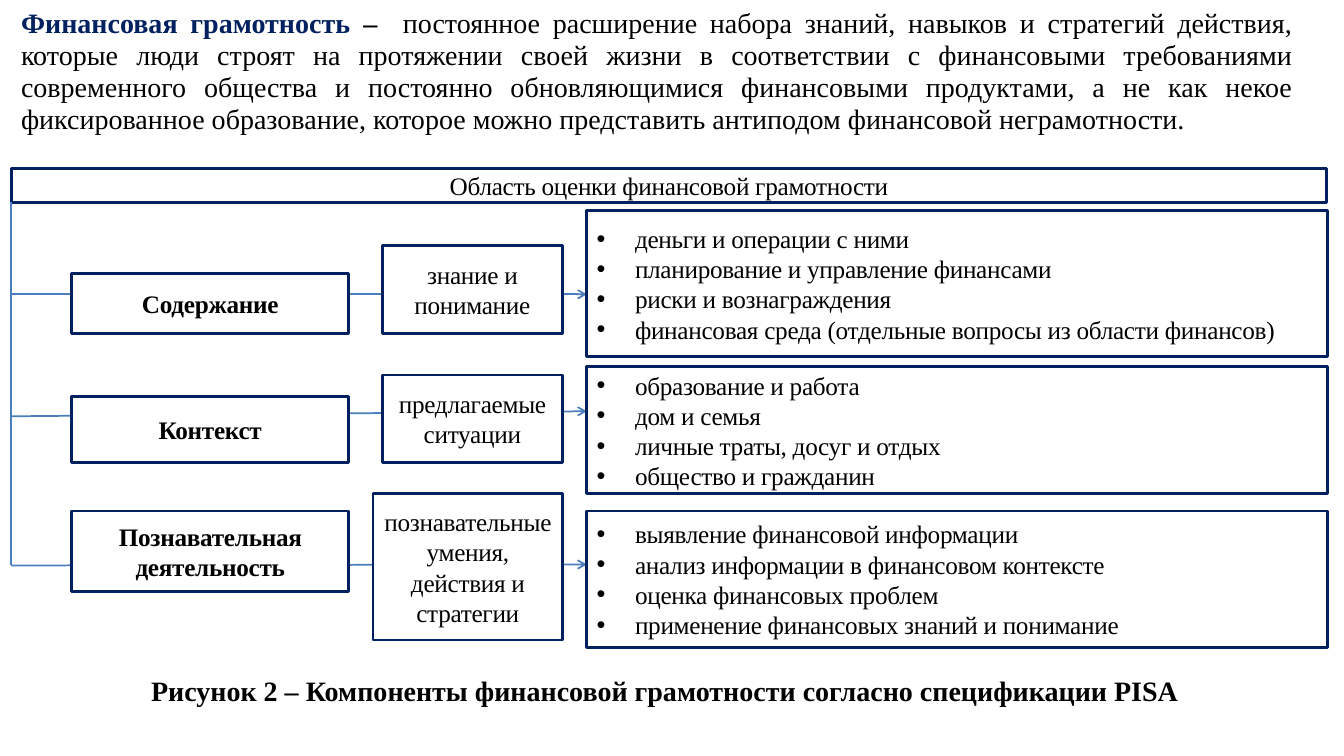
"""Build the slide on the components of financial literacy."""
from lxml import etree
from pptx import Presentation
from pptx.dml.color import RGBColor
from pptx.enum.shapes import MSO_CONNECTOR, MSO_SHAPE
from pptx.enum.text import MSO_ANCHOR, PP_ALIGN
from pptx.oxml.ns import qn
from pptx.util import Inches, Pt

RECT = MSO_SHAPE.RECTANGLE
STRAIGHT = MSO_CONNECTOR.STRAIGHT
MIDDLE = MSO_ANCHOR.MIDDLE
CENTER, JUSTIFY = PP_ALIGN.CENTER, PP_ALIGN.JUSTIFY

WIDTH, HEIGHT = Inches(13.33), Inches(7.5)
FONT = "Times New Roman"
COLORS = {"navy": "002060", "black": "000000", "white": "FFFFFF", "link": "4B7EBC"}

TRUNK_X = 0.83
LABEL = (5.33, 20.63)
MEANS = (28.43, 13.43)
WIDE_MEANS = (27.76, 14.1)
ITEMS = (43.66, 55.14)

TITLE = "Область оценки финансовой грамотности"
CAPTION = "Рисунок 2 – Компоненты финансовой грамотности согласно спецификации PISA"
DEFINITION = (
    "постоянное расширение набора знаний, навыков и стратегий действия, "
    "которые люди строят на протяжении своей жизни в соответствии с финансовыми "
    "требованиями современного общества и постоянно обновляющимися финансовыми "
    "продуктами, а не как некое фиксированное образование, которое можно "
    "представить антиподом финансовой неграмотности."
)
COMPONENTS = [
    {
        "label": ("Содержание", LABEL, (36.13, 8)),
        "means": ("знание и понимание", MEANS, (32.53, 11.6)),
        "items": (["деньги и операции с ними",
                   "планирование и управление финансами",
                   "риски и вознаграждения",
                   "финансовая среда (отдельные вопросы из области финансов)"],
                  ITEMS, (27.87, 19.33)),
        "arrow": (38.93, 38.93),
    },
    {
        "label": ("Контекст", LABEL, (52.4, 8.8)),
        "means": ("предлагаемые ситуации", MEANS, (49.6, 11.6)),
        "items": (["образование и работа",
                   "дом и семья",
                   "личные траты, досуг и отдых",
                   "общество и гражданин"],
                  ITEMS, (48.53, 16.8)),
        "arrow": (55.07, 54.4),
    },
    {
        "label": ("Познавательная деятельность", LABEL, (67.6, 10.67)),
        "means": ("познавательные умения, действия и стратегии",
                  WIDE_MEANS, (65.33, 19.33)),
        "items": (["выявление финансовой информации",
                   "анализ информации в финансовом контексте",
                   "оценка финансовых проблем",
                   "применение финансовых знаний и понимание"],
                  ITEMS, (67.6, 18)),
        "arrow": (74.8, 74.67),
    },
]


def across(share):
    """Turn a percentage of the slide's width into a length."""
    return round(WIDTH * share / 100)


def down(share):
    """Turn a percentage of the slide's height into a length."""
    return round(HEIGHT * share / 100)


def place(col, row):
    """Turn a column and a row into left, top, width and height."""
    return across(col[0]), down(row[0]), across(col[1]), down(row[1])


def add_run(p, text, size, bold=False, color="black"):
    """Add one formatted run to a paragraph."""
    r = p.add_run()
    r.text = text
    r.font.name, r.font.size, r.font.bold = FONT, Pt(size), bold
    r.font.color.rgb = RGBColor.from_string(COLORS[color])
    return r


def add_bullet(p):
    """Give a paragraph a hanging round bullet."""
    pPr = p._p.get_or_add_pPr()
    pPr.set("marL", str(Inches(0.38)))
    pPr.set("indent", str(-Inches(0.38)))
    etree.SubElement(pPr, qn("a:buFont")).set("typeface", "Arial")
    etree.SubElement(pPr, qn("a:buChar")).set("char", "•")


def add_box(s, lines, col, row, bold=False, bullets=False):
    """Add a navy-framed rectangle holding centred text or a bullet list."""
    sp = s.shapes.add_shape(RECT, *place(col, row))
    sp.shadow.inherit = False
    sp.fill.solid()
    sp.fill.fore_color.rgb = RGBColor.from_string(COLORS["white"])
    sp.line.color.rgb = RGBColor.from_string(COLORS["navy"])
    sp.line.width = Pt(2)
    tf = sp.text_frame
    tf.word_wrap, tf.vertical_anchor = True, MIDDLE
    for i, line in enumerate(lines):
        p = tf.add_paragraph() if i else tf.paragraphs[0]
        p.alignment = JUSTIFY if bullets else CENTER
        if bullets:
            add_bullet(p)
        r = add_run(p, line, 18, bold)
        r.font._element.set("spc", "-20")


def add_line(s, start, end, arrow=False):
    """Add a thin straight line, with an open arrowhead if asked."""
    line = s.shapes.add_connector(
        STRAIGHT, across(start[0]), down(start[1]), across(end[0]), down(end[1]))
    line.line.color.rgb = RGBColor.from_string(COLORS["link"])
    line.line.width = Pt(1.25)
    if arrow:
        ln = line.line._get_or_add_ln()
        etree.SubElement(ln, qn("a:tailEnd")).set("type", "arrow")
    etree.SubElement(line._element.spPr, qn("a:effectLst"))


def add_text(s, col, row, alignment):
    """Add a wrapping text box and return its first paragraph."""
    tf = s.shapes.add_textbox(*place(col, row)).text_frame
    tf.word_wrap = True
    p = tf.paragraphs[0]
    p.alignment = alignment
    return p


def add_definition(s):
    """Add the definition at the top of the slide."""
    p = add_text(s, (TRUNK_X, 96.1), (0.4, 18.4), JUSTIFY)
    p.line_spacing = 0.95
    add_run(p, "Финансовая грамотность ", 20, True, "navy")
    add_run(p, "–  ", 20, True)
    add_run(p, DEFINITION, 20)


def add_caption(s):
    """Add the figure caption at the bottom of the slide."""
    p = add_text(s, (0.6, 97.75), (88.4, 5.87), CENTER)
    p.space_before, p.space_after = Pt(4), Pt(3)
    add_run(p, CAPTION, 20, True)


def main():
    """Build and save the slide."""
    prs = Presentation()
    prs.slide_width, prs.slide_height = WIDTH, HEIGHT
    s = prs.slides.add_slide(prs.slide_layouts[6])
    add_definition(s)
    for component in COMPONENTS:
        start, end = component["arrow"]
        add_line(s, (TRUNK_X, start), (ITEMS[0], end), arrow=True)
    add_box(s, [TITLE], (TRUNK_X, 97.9), (22.27, 4.53))
    for component in COMPONENTS:
        label, col, row = component["label"]
        add_box(s, [label], col, row, bold=True)
        means, col, row = component["means"]
        add_box(s, [means], col, row)
        add_box(s, *component["items"], bullets=True)
    add_line(s, (TRUNK_X, 26.67), (TRUNK_X, COMPONENTS[-1]["arrow"][0]))
    add_caption(s)
    prs.save("out.pptx")


if __name__ == "__main__":
    main()
